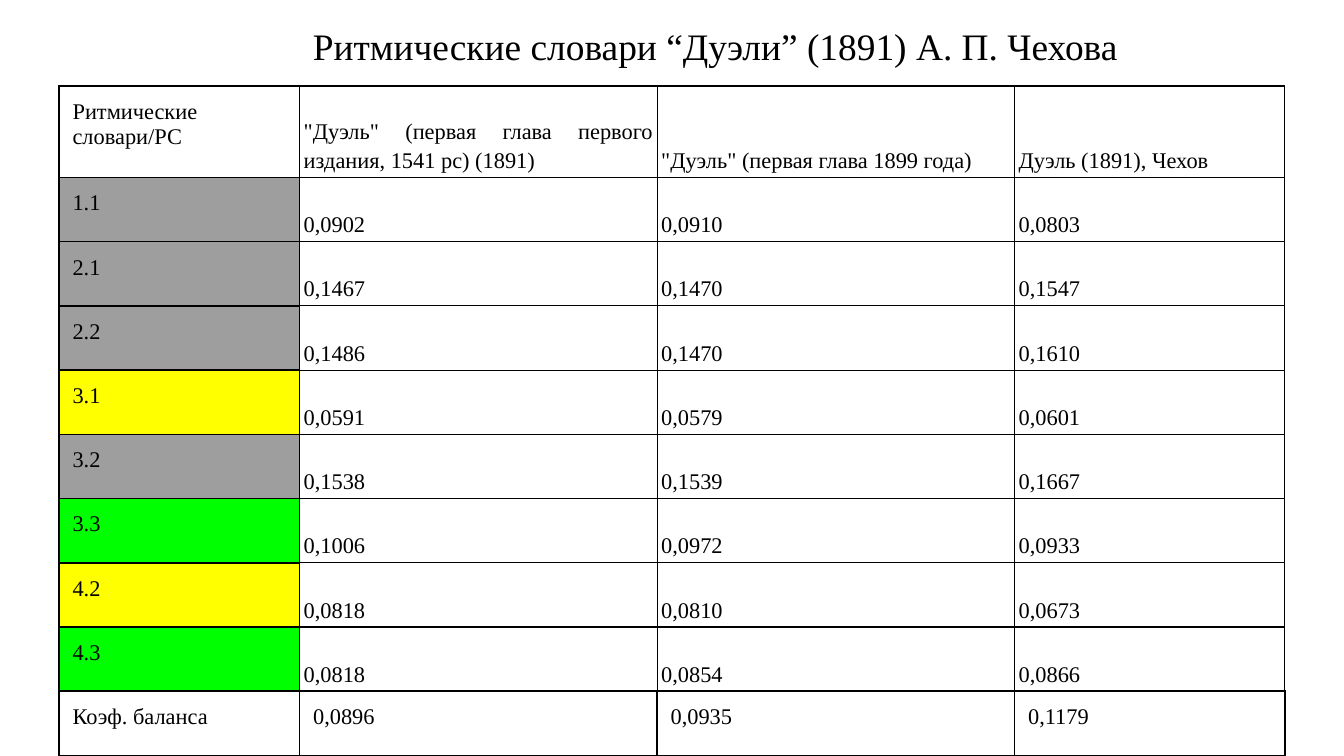
from lxml.etree import SubElement
from pptx import Presentation
from pptx.dml.color import RGBColor
from pptx.enum.text import MSO_ANCHOR, PP_ALIGN
from pptx.oxml.ns import qn
from pptx.util import Inches, Pt

FONT = "Times New Roman"
BLACK, WHITE = "000000", "FFFFFF"
GREY, YELLOW, GREEN = "9E9E9E", "FFFF00", "00FF00"

TITLE = "Ритмические словари “Дуэли” (1891) А. П. Чехова"
ROWS = [
    ("Ритмические словари/РС",
     '"Дуэль" (первая глава первого издания, 1541 рс) (1891)',
     '"Дуэль" (первая глава 1899 года)', "Дуэль (1891), Чехов"),
    ("1.1", "0,0902", "0,0910", "0,0803"),
    ("2.1", "0,1467", "0,1470", "0,1547"),
    ("2.2", "0,1486", "0,1470", "0,1610"),
    ("3.1", "0,0591", "0,0579", "0,0601"),
    ("3.2", "0,1538", "0,1539", "0,1667"),
    ("3.3", "0,1006", "0,0972", "0,0933"),
    ("4.2", "0,0818", "0,0810", "0,0673"),
    ("4.3", "0,0818", "0,0854", "0,0866"),
    ("Коэф. баланса", "0,0896", "0,0935", "0,1179"),
]
FILLS = {"1.1": GREY, "2.1": GREY, "2.2": GREY, "3.1": YELLOW,
         "3.2": GREY, "3.3": GREEN, "4.2": YELLOW, "4.3": GREEN}
WIDE = 10
HIGH = WIDE * 9 / 16
LEFT, TOP = 0.44, 0.64
WIDTHS = [1.79, 2.66, 2.66, 2.01]
LAST = len(ROWS) - 1
HEAD = 0.68
# The rows below the head share the space down to the slide's lower edge.
HEIGHTS = [HEAD] + [(HIGH - TOP - HEAD) / LAST] * LAST
THIN, THICK = 0.75, 1


def color(code):
    return RGBColor.from_string(code)


def write(frame, text, size=12, align=None, space=None):
    para = frame.paragraphs[0]
    para.alignment = align
    para.line_spacing = space
    run = para.add_run()
    run.text = text
    run.font.name = FONT
    run.font.size = Pt(size)
    run.font.color.rgb = color(BLACK)


def pad(box, inset):
    box.margin_left = box.margin_right = Inches(inset)
    box.margin_top = box.margin_bottom = Inches(inset)


def edge(cell, side, width):
    """Draw one border; sides must come in the order L, R, T, B."""
    line = SubElement(cell._tc.get_or_add_tcPr(), qn(f"a:ln{side}"),
                      w=str(Pt(width)))
    fill = SubElement(line, qn("a:solidFill"))
    SubElement(fill, qn("a:srgbClr"), val=BLACK)


def widths(row, col):
    """Labels and the last row have thick borders, and so do their neighbours."""
    if row == LAST or col == 0:
        return {"L": THICK, "R": THICK if row else THIN, "T": THICK, "B": THICK}
    return {"L": THICK if col == 1 and row else THIN, "R": THIN,
            "T": THIN, "B": THICK if row == LAST - 1 else THIN}


def fill_cell(cell, text, row, col):
    roomy = col == 0 or row == LAST
    pad(cell, 0.1 if roomy else 0.03)
    cell.vertical_anchor = MSO_ANCHOR.TOP if roomy else MSO_ANCHOR.BOTTOM
    write(cell.text_frame, text, align=PP_ALIGN.JUSTIFY,
          space=None if roomy else 1.15)
    for side, width in widths(row, col).items():
        edge(cell, side, width)
    cell.fill.solid()
    cell.fill.fore_color.rgb = color(FILLS.get(text, WHITE))


deck = Presentation()
deck.slide_width, deck.slide_height = Inches(WIDE), Inches(HIGH)
slide = deck.slides.add_slide(deck.slide_layouts[6])

table = slide.shapes.add_table(
    len(ROWS), len(WIDTHS), Inches(LEFT), Inches(TOP),
    Inches(sum(WIDTHS)), Inches(sum(HEIGHTS))).table
table.first_row = table.horz_banding = False
for column, width in zip(table.columns, WIDTHS):
    column.width = Inches(width)
for line, height in zip(table.rows, HEIGHTS):
    line.height = Inches(height)
for row, texts in enumerate(ROWS):
    for col, text in enumerate(texts):
        fill_cell(table.cell(row, col), text, row, col)

title = slide.shapes.add_textbox(
    Inches(2.23), Inches(0.07), Inches(6.97), Inches(0.54)).text_frame
title.word_wrap = True
pad(title, 0.1)
write(title, TITLE, size=20)

deck.save("out.pptx")
